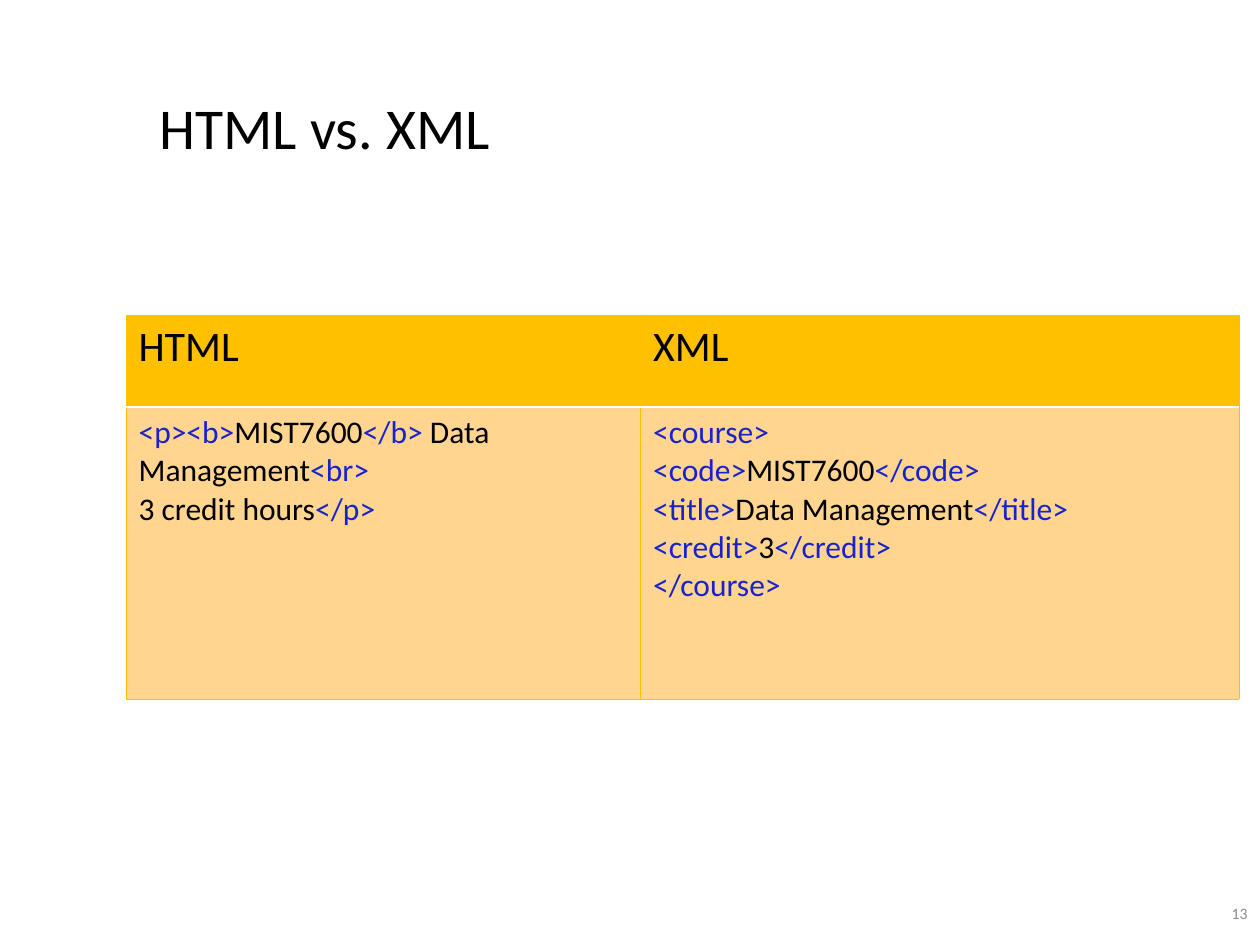
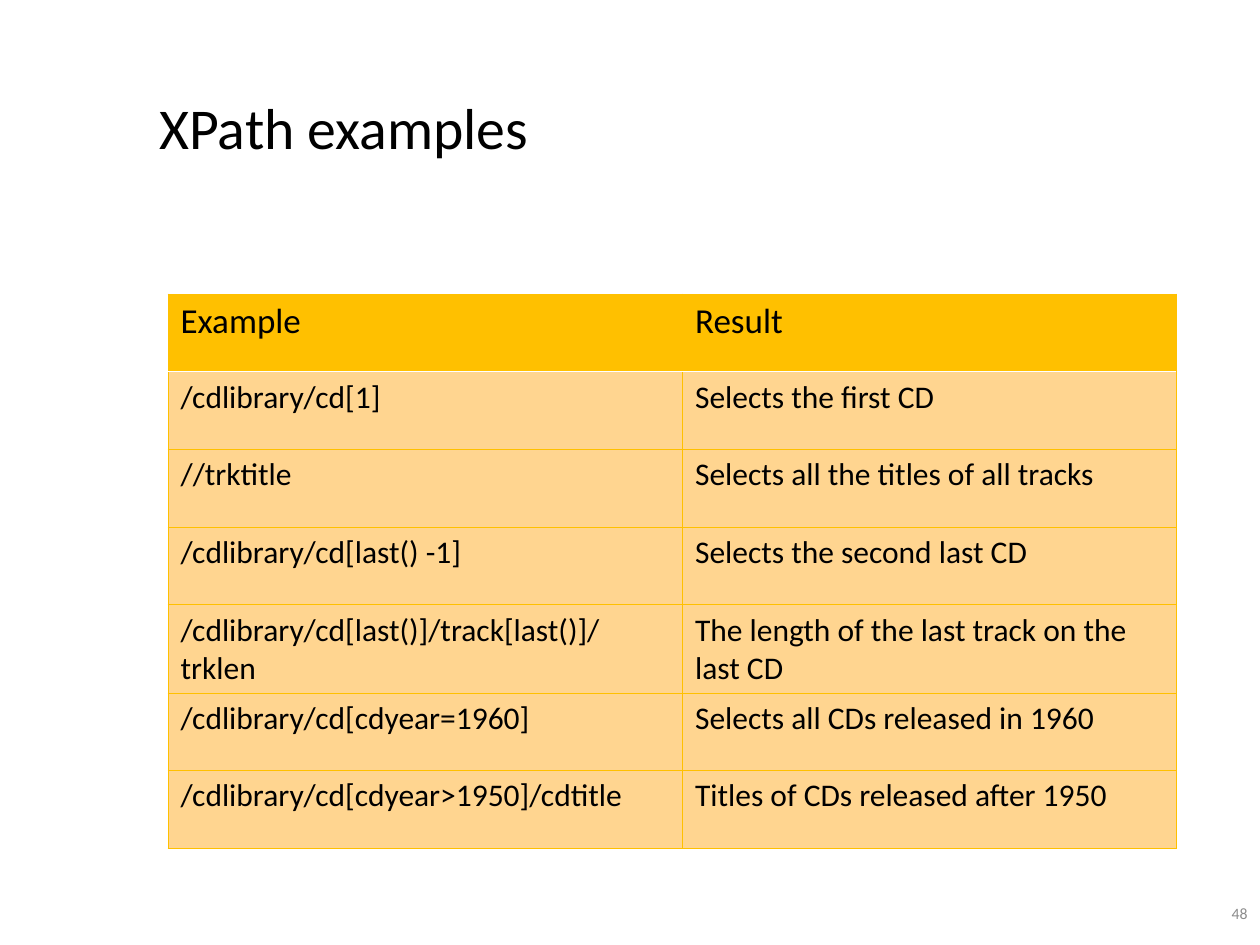
from lxml.etree import SubElement
from pptx import Presentation
from pptx.dml.color import RGBColor
from pptx.enum.text import MSO_ANCHOR, PP_ALIGN
from pptx.oxml.ns import qn
from pptx.util import Pt

HUES = {
    "ink": "000000",
    "tag": "1822CD",
    "head": "FFC000",
    "body": "FFD590",
    "rule": "FFFFFF",
    "page": "8C8C8C",
}


class Deck:
    def __init__(self):
        self.file = Presentation()
        self.file.slide_width, self.file.slide_height = Pt(720), Pt(540)
        self.face = "Calibri"
        self.slide = None

    def font(self, item, size, hue="ink"):
        item.font.name = self.face
        item.font.size = Pt(size)
        item.font.bold = False
        item.font.color.rgb = RGBColor.from_string(HUES[hue])

    def start(self, title, page):
        self.slide = self.file.slides.add_slide(self.file.slide_layouts[6])
        self.label(title, (84, 30, 612, 90), 33).line_spacing = 0.9
        self.label(page, (648, 504, 72, 36), 9, "page").alignment = PP_ALIGN.RIGHT

    def label(self, text, box, size, hue="ink"):
        frame = self.slide.shapes.add_textbox(*map(Pt, box)).text_frame
        frame.word_wrap = True
        frame.vertical_anchor = MSO_ANCHOR.MIDDLE
        line = frame.paragraphs[0]
        line.text = text
        self.font(line, size, hue)
        return line

    def markup(self, line, text, size):
        self.font(line, size)
        if "<" not in text:
            line.text = text
            return
        for part in text.replace("<", "|<").replace(">", ">|").split("|"):
            if part:
                run = line.add_run()
                run.text = part
                if part.startswith("<"):
                    self.font(run, size, "tag")

    def edge(self, cell, side, hue, width):
        line = SubElement(cell._tc.get_or_add_tcPr(), qn(f"a:ln{side}"), w=str(Pt(width)))
        fill = SubElement(line, qn("a:solidFill"))
        SubElement(fill, qn("a:srgbClr"), val=HUES[hue])

    def cell(self, cell, text, row, size):
        for side in "LRTB":
            split = (row, side) in ((0, "B"), (1, "T"))
            self.edge(cell, side, *(("rule", 1) if split else ("head", 0.5)))
        cell.fill.solid()
        cell.fill.fore_color.rgb = RGBColor.from_string(HUES["body" if row else "head"])
        frame = cell.text_frame
        for i, text in enumerate(text.split("\n")):
            line = frame.add_paragraph() if i else frame.paragraphs[0]
            self.markup(line, text, size)

    def table(self, left, top, wide, high, rows, head):
        box = map(Pt, (left, top, sum(wide), sum(high)))
        grid = self.slide.shapes.add_table(len(rows), len(wide), *box).table
        grid.first_row = grid.horz_banding = False
        for col, width in zip(grid.columns, wide):
            col.width = Pt(width)
        for r, (height, texts) in enumerate(zip(high, rows)):
            grid.rows[r].height = Pt(height)
            for c, text in enumerate(texts):
                self.cell(grid.cell(r, c), text, r, 18 if r else head)


def main():
    deck = Deck()

    deck.start("HTML vs. XML", "13")
    html = "<p><b>MIST7600</b> Data Management<br>\n3 credit hours</p>"
    xml = "\n".join((
        "<course>",
        "<code>MIST7600</code>",
        "<title>Data Management</title>",
        "<credit>3</credit>",
        "</course>",
    ))
    deck.table(72, 180, (294, 342), (52.5, 167), [("HTML", "XML"), (html, xml)], 24)

    deck.start("XPath examples", "48")
    paths = [
        ("Example", "Result"),
        ("/cdlibrary/cd[1]", "Selects the first CD"),
        ("//trktitle", "Selects all the titles of all tracks"),
        ("/cdlibrary/cd[last() -1]", "Selects the second last CD"),
        ("/cdlibrary/cd[last()]/track[last()]/trklen",
         "The length of the last track on the last CD"),
        ("/cdlibrary/cd[cdyear=1960]", "Selects all CDs released in 1960"),
        ("/cdlibrary/cd[cdyear>1950]/cdtitle", "Titles of CDs released after 1950"),
    ]
    deck.table(96, 168, (294, 282), [44.4] * len(paths), paths, 20)

    deck.file.save("out.pptx")


if __name__ == "__main__":
    main()
